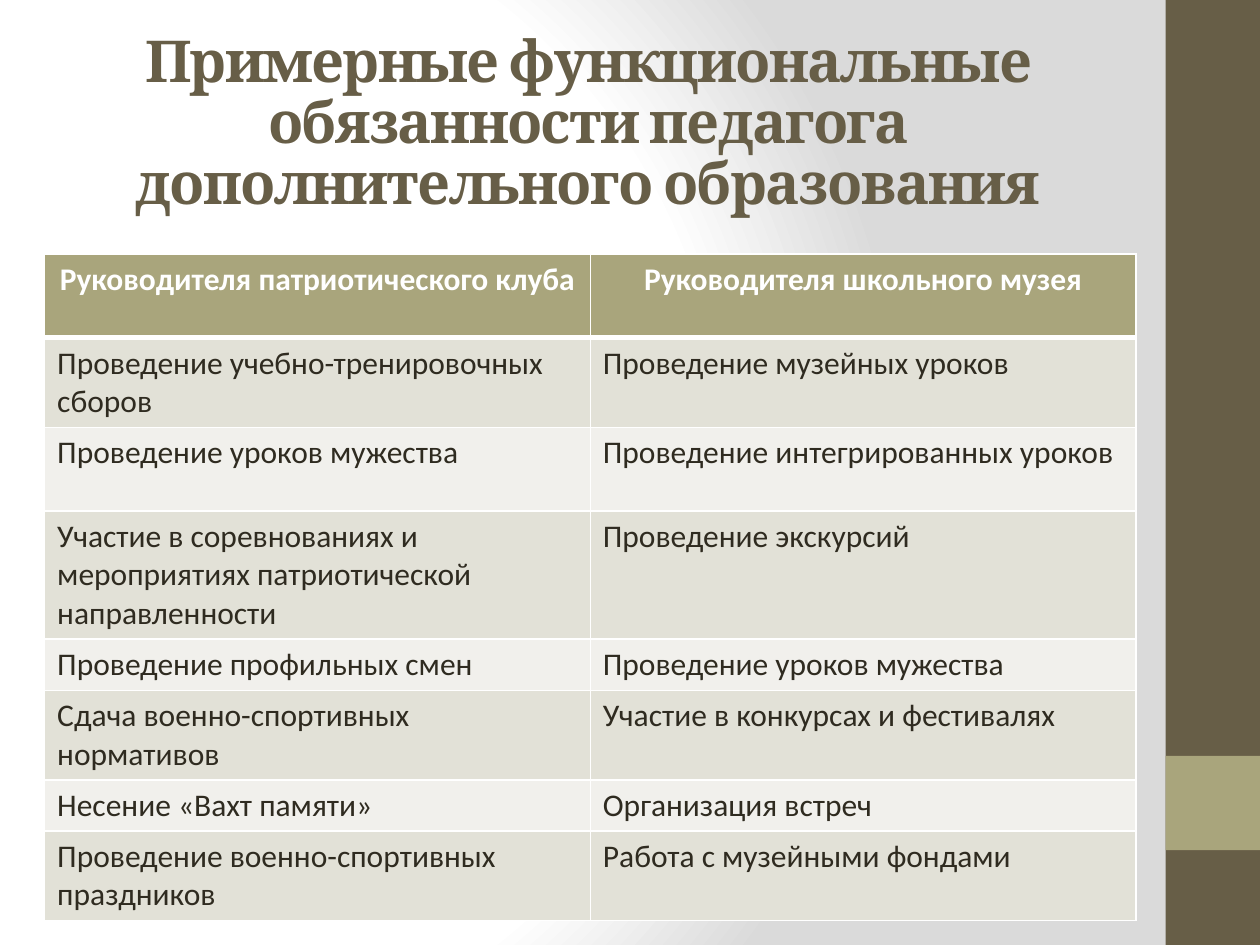
from dataclasses import dataclass

from pptx import Presentation
from pptx.dml.color import RGBColor
from pptx.enum.shapes import MSO_SHAPE
from pptx.enum.text import MSO_ANCHOR, MSO_AUTO_SIZE, PP_ALIGN
from pptx.oxml import parse_xml
from pptx.oxml.ns import nsdecls
from pptx.util import Cm, Pt


@dataclass(frozen=True)
class Theme:
    dark: str = "675E47"
    accent: str = "A9A57C"
    ink: str = "2F2B20"
    white: str = "FFFFFF"
    shade: str = "DADADA"
    bands: tuple = ("E2E1D7", "F1F0EC")
    title_font: str = "Cambria"
    body_font: str = "Calibri"
    title_size: int = 33
    body_size: int = 18
    title_tracking: int = -1
    grid_line: int = 1
    header_line: int = 3


THEME = Theme()

TITLE = "Примерные функциональные обязанности педагога дополнительного образования"
HEADER = ("Руководителя патриотического клуба", "Руководителя школьного музея")
# Each duty row: club leader, museum leader, height in text lines
DUTIES = [
    ("Проведение учебно-тренировочных сборов", "Проведение музейных уроков", 2),
    ("Проведение уроков мужества", "Проведение интегрированных уроков", 2),
    ("Участие в соревнованиях и мероприятиях патриотической направленности",
     "Проведение экскурсий", 3),
    ("Проведение профильных смен", "Проведение уроков мужества", 1),
    ("Сдача военно-спортивных нормативов", "Участие в конкурсах и фестивалях", 2),
    ("Несение «Вахт памяти»", "Организация встреч", 1),
    ("Проведение военно-спортивных праздников", "Работа с музейными фондами", 2),
]


def add_span(para, text, font, size, color, bold):
    span = para.add_run()
    span.text = text
    span.font.name = font
    span.font.size = Pt(size)
    span.font.bold = bold
    span.font.color.rgb = RGBColor.from_string(color)
    return span


def paint_background(page):
    stops = "".join(
        f'<a:gs pos="{position * 1000}"><a:srgbClr val="{color}"/></a:gs>'
        for position, color in ((0, THEME.white), (75, THEME.white), (100, THEME.shade)))
    page.element.cSld.insert(0, parse_xml(
        f'<p:bg {nsdecls("p", "a")}><p:bgPr><a:gradFill rotWithShape="1">'
        f'<a:gsLst>{stops}</a:gsLst><a:path path="circle">'
        '<a:fillToRect l="20000" t="50000" r="100000" b="50000"/></a:path>'
        '</a:gradFill><a:effectLst/></p:bgPr></p:bg>'))


def add_sidebar(page, left, top, width, height):
    # The accent is a square standing 80 % of the way down the bar
    for offset, length, color in ((0, height, THEME.dark),
                                  (int(height * 0.8), width, THEME.accent)):
        bar = page.shapes.add_shape(MSO_SHAPE.RECTANGLE, left, top + offset, width, length)
        bar.shadow.inherit = False
        bar.fill.solid()
        bar.fill.fore_color.rgb = RGBColor.from_string(color)
        bar.line.fill.background()


def fill_title(page, left, top, width, height):
    title = page.shapes.title
    title.left, title.top, title.width, title.height = left, top, width, height
    frame = title.text_frame
    frame.word_wrap = True
    frame.auto_size = MSO_AUTO_SIZE.NONE
    frame.vertical_anchor = MSO_ANCHOR.MIDDLE
    para = frame.paragraphs[0]
    para.alignment = PP_ALIGN.CENTER
    para.line_spacing = 0.88
    span = add_span(para, TITLE, THEME.title_font, THEME.title_size, THEME.dark, True)
    span.font._element.set("spc", str(THEME.title_tracking * 100))


def set_borders(cell, **widths):
    properties = cell._tc.get_or_add_tcPr()
    for side in "LRTB":
        points = widths.get(side, THEME.grid_line)
        properties.append(parse_xml(
            f'<a:ln{side} {nsdecls("a")} w="{Pt(points)}"><a:solidFill>'
            f'<a:srgbClr val="{THEME.white}"/></a:solidFill></a:ln{side}>'))


def fill_cell(cell, text, fill, color, header=False, **borders):
    set_borders(cell, **borders)
    cell.fill.solid()
    cell.fill.fore_color.rgb = RGBColor.from_string(fill)
    para = cell.text_frame.paragraphs[0]
    para.alignment = PP_ALIGN.CENTER if header else PP_ALIGN.LEFT
    add_span(para, text, THEME.body_font, THEME.body_size, color, header)


def add_duties(page, left, top, width):
    heights = [Cm(0.24 + 0.725 * lines) for lines in [2] + [duty[-1] for duty in DUTIES]]
    table = page.shapes.add_table(
        len(heights), len(HEADER), left, top, width, sum(heights)).table
    for row, height in zip(table.rows, heights):
        row.height = height
    for column in table.columns:
        column.width = width // len(HEADER)

    # Header row
    for index, text in enumerate(HEADER):
        fill_cell(table.cell(0, index), text, THEME.accent, THEME.white,
                  header=True, B=THEME.header_line)

    # Banded duty rows
    for number, (*texts, _) in enumerate(DUTIES):
        upper = THEME.grid_line if number else THEME.header_line
        for index, text in enumerate(texts):
            fill_cell(table.cell(number + 1, index), text,
                      THEME.bands[number % 2], THEME.ink, T=upper)


def main():
    deck = Presentation()
    deck.slide_width, deck.slide_height = Cm(25.4), Cm(19.05)
    page = deck.slides.add_slide(deck.slide_layouts[5])
    paint_background(page)
    add_sidebar(page, Cm(23.5), 0, Cm(1.9), deck.slide_height)
    fill_title(page, Cm(1.27), Cm(0.33), Cm(21.16), Cm(4.4))
    add_duties(page, Cm(0.9), Cm(5.12), Cm(22))
    deck.save("out.pptx")


if __name__ == "__main__":
    main()
